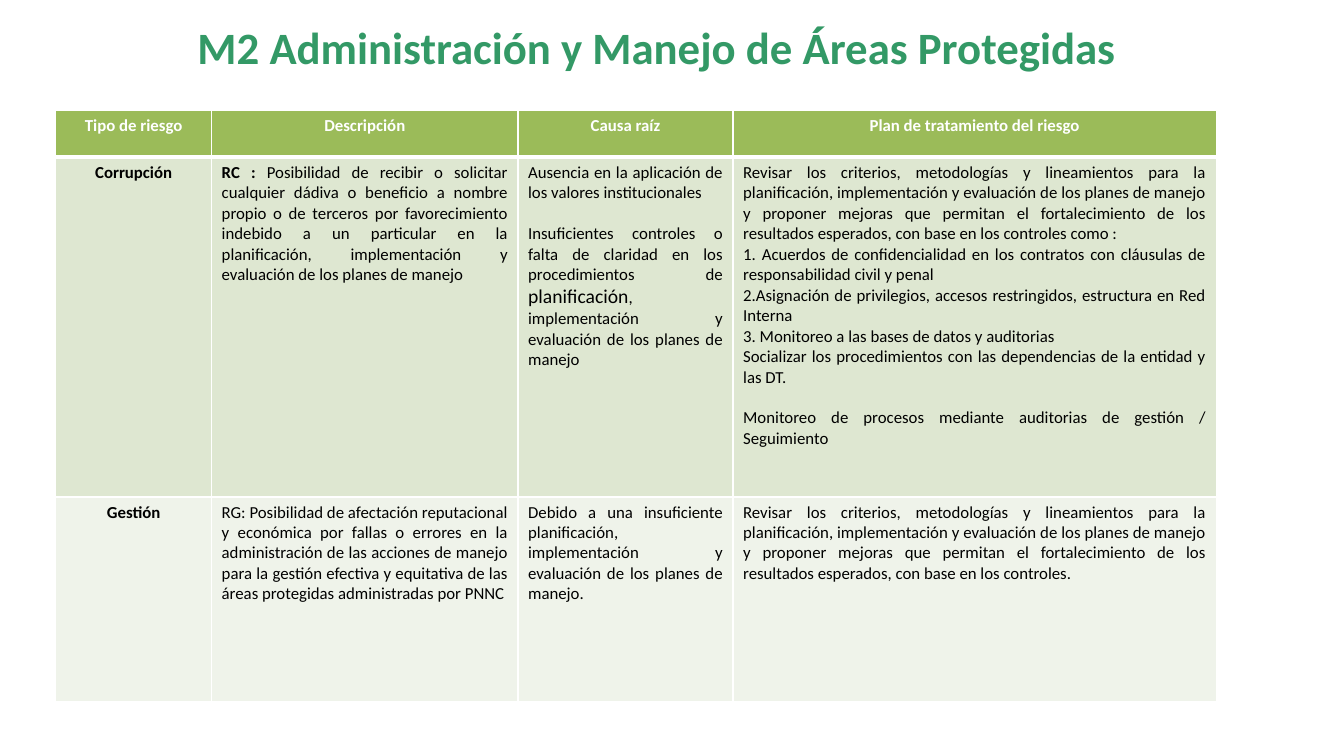
from lxml import etree
from pptx import Presentation, util as u
from pptx.dml.color import RGBColor
from pptx.enum import text
from pptx.oxml.ns import qn

WHITE, BLACK, TITLE_GREEN = "FFFFFF", "000000", "339966"
ROW_FILLS = ["9BBB59", "DEE7D1", "EFF3EA"]
LINE_GAP = 14.6  # one 12 pt line


def rgb(value):
    return RGBColor.from_string(value)


class Deck:
    """Holds the style and the current slide; lengths are percent of its size."""

    font, body_size = "Calibri", 12

    def __init__(self):
        self.prs = Presentation()
        self.prs.slide_width, self.prs.slide_height = u.Inches(13.33), u.Inches(7.5)
        self.s = self.prs.slides.add_slide(self.prs.slide_layouts[6])

    def x(self, share):
        return u.Emu(round(self.prs.slide_width * share / 100))

    def y(self, share):
        return u.Emu(round(self.prs.slide_height * share / 100))

    def run(self, p, words, color, bold=False, size=None):
        r = p.add_run()
        r.text = words
        r.font.name, r.font.size = self.font, u.Pt(size or self.body_size)
        r.font.bold, r.font.color.rgb = bold, rgb(color)

    def title(self, words, left, top, width, height):
        sp = self.s.shapes.add_textbox(self.x(left), self.y(top), self.x(width), self.y(height))
        tf = sp.text_frame
        tf.word_wrap = True
        tf.margin_left = tf.margin_right = tf.margin_top = tf.margin_bottom = 0
        p = tf.paragraphs[0]
        p.alignment = text.PP_ALIGN.CENTER
        self.run(p, words, TITLE_GREEN, True, 32)

    def borders(self, cell, top, bottom):
        tcPr = cell._tc.get_or_add_tcPr()
        for i, (side, width) in enumerate(zip("LRTB", (1, 1, top, bottom))):
            ln = etree.Element(qn(f"a:ln{side}"), w=str(u.Pt(width)))
            fill = etree.SubElement(ln, qn("a:solidFill"))
            etree.SubElement(fill, qn("a:srgbClr"), val=WHITE)
            tcPr.insert(i, ln)

    def cell(self, cell, paragraphs, color, align):
        """Fill a cell; each paragraph is (space before, runs)."""
        tf = cell.text_frame
        for i, (gap, runs) in enumerate(paragraphs):
            p = tf.add_paragraph() if i else tf.paragraphs[0]
            p.alignment = align
            if gap:
                p.space_before = u.Pt(gap)
            for words, *style in runs:
                self.run(p, words, color, *style)

    def table(self, rows, left, top, widths, heights):
        t = self.s.shapes.add_table(len(rows), len(widths), self.x(left), self.y(top),
                                    self.x(sum(widths)), self.y(sum(heights))).table
        for column, width in zip(t.columns, widths):
            column.width = self.x(width)
        for i, (row, height, fill) in enumerate(zip(rows, heights, ROW_FILLS)):
            t.rows[i].height = self.y(height)
            for j, paragraphs in enumerate(row):
                cell = t.cell(i, j)
                cell.fill.solid()
                cell.fill.fore_color.rgb = rgb(fill)
                self.borders(cell, 3 if i == 1 else 1, 3 if i == 0 else 1)
                centred = i == 0 or j == 0
                self.cell(cell, paragraphs, BLACK if i else WHITE,
                          text.PP_ALIGN.CENTER if centred else text.PP_ALIGN.JUSTIFY)


def plain(*lines):
    """Make one unspaced paragraph per line."""
    return [(0, [(line,)]) for line in lines]


def heading(words):
    return [(0, [(words, True)])]


PLANS = "planificación, implementación y evaluación de los planes de manejo"
REVIEW = ("Revisar los criterios, metodologías y lineamientos para la " + PLANS +
          " y proponer mejoras que permitan el fortalecimiento de los resultados "
          "esperados, con base en los controles")

HEADER = [heading(h) for h in ("Tipo de riesgo", "Descripción", "Causa raíz",
                               "Plan de tratamiento del riesgo")]
CORRUPTION = [
    heading("Corrupción"),
    [(0, [("RC : ", True),
          ("Posibilidad de recibir o solicitar cualquier dádiva o beneficio a nombre propio "
           "o de terceros por favorecimiento indebido a un particular en la " + PLANS,)])],
    plain("Ausencia en la aplicación de los valores institucionales") + [
        (LINE_GAP, [("Insuficientes controles o falta de claridad en los procedimientos de ",),
                    ("planificación", False, 14),
                    (", implementación y evaluación de los planes de manejo",)])],
    plain(REVIEW + " como :",
          "1. Acuerdos de confidencialidad en los contratos con cláusulas de "
          "responsabilidad civil y penal",
          "2.Asignación de privilegios, accesos restringidos, estructura en Red Interna",
          "3. Monitoreo a las bases de datos y auditorias",
          "Socializar los procedimientos con las dependencias de la entidad y las DT.") + [
        (LINE_GAP, [("Monitoreo de procesos mediante auditorias de gestión / Seguimiento",)])],
]
MANAGEMENT = [
    heading("Gestión"),
    plain("RG: Posibilidad de afectación reputacional y económica por fallas o errores en la "
          "administración de las acciones de manejo para la gestión efectiva y equitativa de "
          "las áreas protegidas administradas por PNNC"),
    plain("Debido a una insuficiente " + PLANS + "."),
    plain(REVIEW + "."),
]


def main():
    deck = Deck()
    deck.title("M2 Administración y Manejo de Áreas Protegidas", 13.43, 2.67, 70.9, 7.2)
    deck.table([HEADER, CORRUPTION, MANAGEMENT], 4.15, 14.55,
               widths=[11.6, 22.8, 16, 35.95], heights=[6.25, 44.95, 27.05])
    deck.prs.save("out.pptx")


if __name__ == "__main__":
    main()
